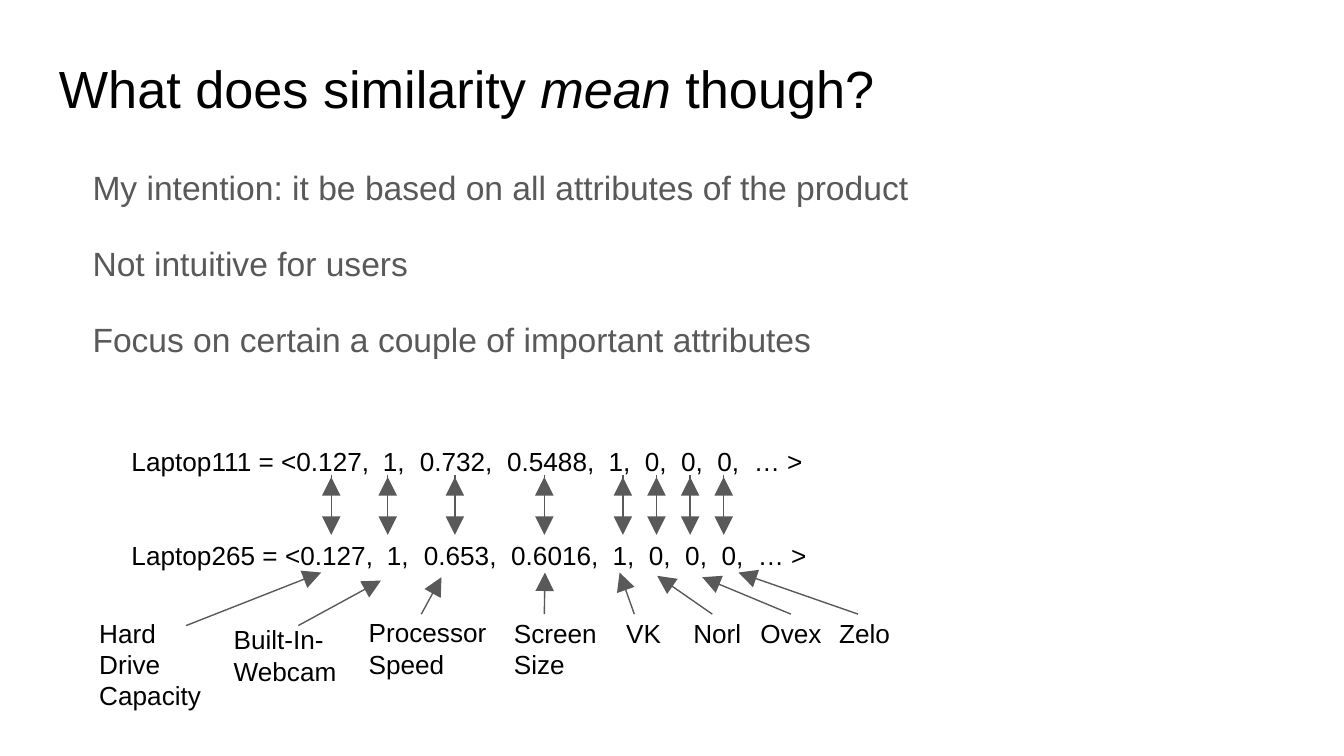
"""Builds the slide on what similarity between two laptops means."""
from typing import NamedTuple

from lxml import etree
from pptx import Presentation
from pptx import util as u
from pptx.dml.color import RGBColor
from pptx.enum import shapes, text
from pptx.oxml.ns import qn

PX = 4572
COLORS = {"ink": "000000", "muted": "595959", "paper": "FFFFFF"}


class Box(NamedTuple):
    left: int
    top: int
    width: int
    height: int


class Arrow(NamedTuple):
    x1: int
    y1: int
    x2: int
    y2: int


class Attribute(NamedTuple):
    name: str
    box: Box
    pointer: Arrow


class Vector(NamedTuple):
    name: str
    values: str
    tab_shift: int


TITLE = (("What does similarity ", False), ("mean ", True), ("though?", False))
POINTS = (
    "My intention: it be based on all attributes of the product",
    "Not intuitive for users",
    "Focus on certain a couple of important attributes",
)
VECTORS = (
    Vector("Laptop111", "0.127, 1, 0.732, 0.5488, 1, 0, 0, 0, …", -6),
    Vector("Laptop265", "0.127, 1, 0.653, 0.6016, 1, 0, 0, 0, …", 0),
)
VALUE_TABS = (380, 435, 565, 716, 770, 824, 878, 932)
MATCH_COLUMNS = (493, 577, 677, 810, 927, 977, 1027, 1077)
ATTRIBUTES = (
    Attribute("Hard Drive Capacity", Box(128, 898, 200, 178), Arrow(277, 931, 478, 852)),
    Attribute("Built-In-Webcam", Box(328, 908, 200, 178), Arrow(444, 931, 567, 864)),
    Attribute("Processor Speed", Box(529, 898, 234, 126), Arrow(627, 914, 657, 859)),
    Attribute("Screen Size", Box(745, 898, 200, 178), Arrow(810, 914, 811, 852)),
    Attribute("VK", Box(912, 898, 104, 178), Arrow(944, 914, 922, 852)),
    Attribute("Norl", Box(1012, 898, 122, 110), Arrow(1060, 914, 978, 857)),
    Attribute("Ovex", Box(1112, 898, 136, 98), Arrow(1177, 914, 1045, 859)),
    Attribute("Zelo", Box(1229, 898, 136, 98), Arrow(1277, 914, 1099, 852)),
)


def px(length: int) -> u.Emu:
    """Turn px into EMU."""
    return u.Emu(length * PX)


def add_box(slide, box: Box):
    """Add a wrapping text box and return its text frame."""
    frame = slide.shapes.add_textbox(*map(px, box)).text_frame
    frame.word_wrap = True
    frame.vertical_anchor = text.MSO_ANCHOR.TOP
    frame.margin_left = frame.margin_right = px(20)
    frame.margin_top = frame.margin_bottom = px(20)
    return frame


def style(frame, size: int, color: str) -> None:
    """Format every run of a text frame."""
    for paragraph in frame.paragraphs:
        for run in paragraph.runs:
            run.font.name = "Arial"
            run.font.size = u.Pt(size)
            run.font.color.rgb = RGBColor.from_string(COLORS[color])


def add_title(slide) -> None:
    """Add the title with its italic word."""
    frame = add_box(slide, Box(68, 64, 1864, 126))
    for words, italic in TITLE:
        run = frame.paragraphs[0].add_run()
        run.text = words
        run.font.italic = italic
    style(frame, 28, "ink")


def add_points(slide) -> None:
    """Add the three statements with a hanging indent."""
    frame = add_box(slide, Box(68, 219, 1864, 308))
    frame.text = "\n".join(POINTS)
    for point in frame.paragraphs:
        properties = point._p.get_or_add_pPr()
        properties.set("marL", str(px(100)))
        properties.set("indent", str(px(-50)))
        point.line_spacing = 1.15
        point.space_after = u.Pt(16)
    style(frame, 18, "muted")


def add_vectors(slide) -> None:
    """Add both attribute vectors, their values set on tab stops."""
    frame = add_box(slide, Box(176, 643, 1724, 338))
    frame.text = "\n".join(
        f"{vector.name} = <" + vector.values.replace(", ", ",\t") + " >"
        for vector in VECTORS
    )
    for vector, row in zip(VECTORS, frame.paragraphs):
        stops = etree.SubElement(row._p.get_or_add_pPr(), qn("a:tabLst"))
        for position in VALUE_TABS:
            place = str(px(position + vector.tab_shift))
            etree.SubElement(stops, qn("a:tab"), pos=place, algn="l")
    frame.paragraphs[1].space_before = u.Pt(33.5)
    style(frame, 14, "ink")


def add_arrow(slide, arrow: Arrow) -> None:
    """Add a thin line with a large triangle at its end."""
    line = slide.shapes.add_connector(
        shapes.MSO_CONNECTOR.STRAIGHT, *map(px, arrow)
    )
    line.line.color.rgb = RGBColor.from_string(COLORS["muted"])
    line.line.width = u.Pt(0.75)
    etree.SubElement(
        line.line._get_or_add_ln(), qn("a:tailEnd"), type="triangle", w="lg", len="lg"
    )
    etree.SubElement(line._element.spPr, qn("a:effectLst"))


def add_label(slide, attribute: Attribute) -> None:
    """Add the name of an attribute."""
    frame = add_box(slide, attribute.box)
    frame.text = attribute.name
    style(frame, 14, "ink")


def main() -> None:
    """Build and save the presentation."""
    deck = Presentation()
    deck.slide_width, deck.slide_height = px(2000), px(1125)
    slide = deck.slides.add_slide(deck.slide_layouts[6])
    slide.background.fill.solid()
    slide.background.fill.fore_color.rgb = RGBColor.from_string(COLORS["paper"])
    add_points(slide)
    add_vectors(slide)
    for column in MATCH_COLUMNS:
        add_arrow(slide, Arrow(column, 707, column, 796))
        add_arrow(slide, Arrow(column, 760, column, 710))
    add_title(slide)
    for attribute in ATTRIBUTES:
        add_label(slide, attribute)
    for attribute in ATTRIBUTES:
        add_arrow(slide, attribute.pointer)
    deck.save("out.pptx")


if __name__ == "__main__":
    main()
